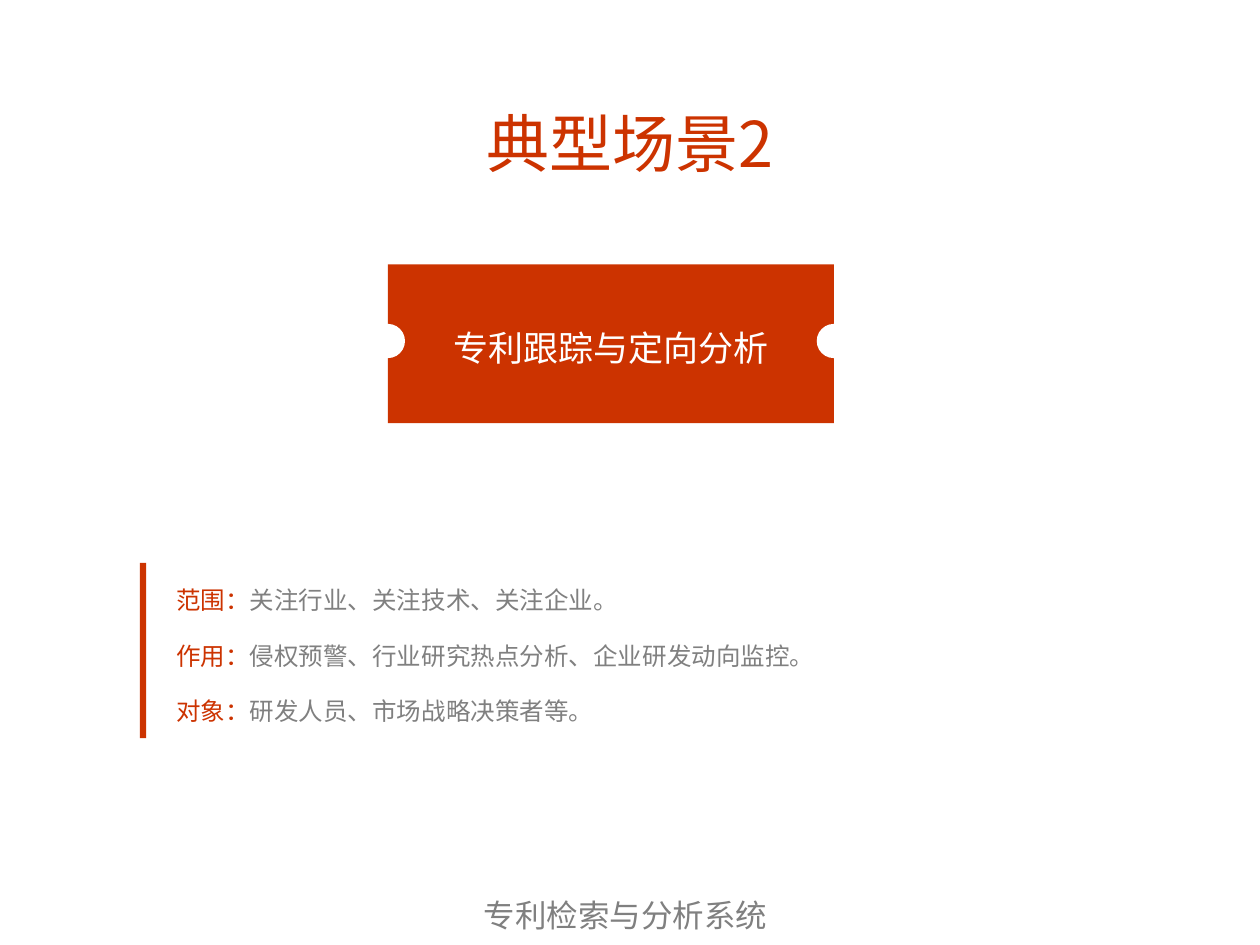
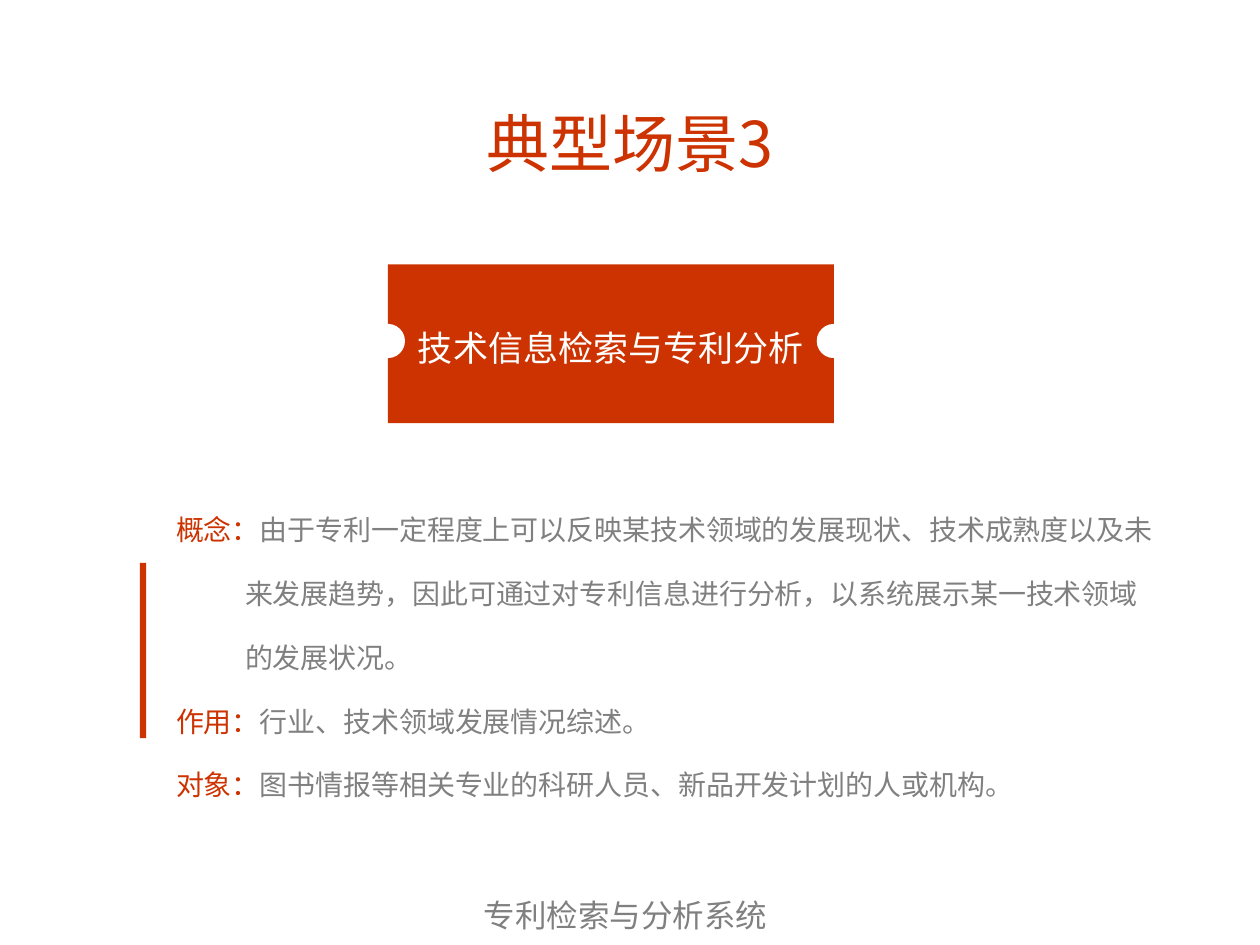
from dataclasses import dataclass
from typing import NamedTuple

from lxml.etree import SubElement
from pptx import Presentation
from pptx.dml.color import RGBColor as Rgb
from pptx.enum.shapes import MSO_SHAPE as Preset
from pptx.enum.text import MSO_ANCHOR as Anchor, PP_ALIGN as Align
from pptx.oxml.ns import qn
from pptx.util import Cm, Pt


@dataclass(frozen=True)
class Theme:
    """Colours, fonts and type sizes shared by the slides."""
    accent: Rgb = Rgb(0xCC, 0x33, 0x00)
    grey: Rgb = Rgb(0x80, 0x80, 0x80)
    white: Rgb = Rgb(0xFF, 0xFF, 0xFF)
    title_font: str = "Noto Sans CJK SC"
    body_font: str = "Arial"
    title_size: int = 36
    topic_size: int = 20
    footer_size: int = 18


class Box(NamedTuple):
    """A region of the slide in centimetres."""
    left: float
    top: float
    width: float
    height: float

    def lengths(self):
        """Return the four sides as slide lengths."""
        return [Cm(side) for side in self]


THEME = Theme()
TITLE = Box(1.75, 1.02, 21.89, 3.68)
TICKET = Box(7.82, 5.33, 8.99, 3.2)
SIDE_BAR = Box(2.82, 11.35, 0.13, 3.53)
DETAILS = Box(3.3, 8.74, 20.6, 8.41)
FOOTER = Box(9.5, 17.93, 6.71, 1.02)
NOTCH_SIZE, NOTCH_DROP = 0.69, 1.2
CONTINUATION_INDENT = 1.39
FOOTER_TEXT = "专利检索与分析系统"

SCENARIOS = [
    ("典型场景2", "专利跟踪与定向分析", 14, [
        ("范围：", "关注行业、关注技术、关注企业。"),
        ("作用：", "侵权预警、行业研究热点分析、企业研发动向监控。"),
        ("对象：", "研发人员、市场战略决策者等。"),
    ]),
    ("典型场景3", "技术信息检索与专利分析", 16, [
        ("概念：", "由于专利一定程度上可以反映某技术领域的发展现状、技术成熟度以及未"),
        ("", "来发展趋势，因此可通过对专利信息进行分析，以系统展示某一技术领域"),
        ("", "的发展状况。"),
        ("作用：", "行业、技术领域发展情况综述。"),
        ("对象：", "图书情报等相关专业的科研人员、新品开发计划的人或机构。"),
    ]),
]


def add_run(paragraph, text, size, color, font=THEME.body_font):
    """Append one styled run, with the font set for Latin and Chinese."""
    run = paragraph.add_run()
    run.text = text
    run.font.size = Pt(size)
    run.font.color.rgb = color
    run.font.name = font
    SubElement(run.font._element, qn("a:ea"), typeface=font)


def add_filled(slide, preset, box, color):
    """Add a flat shape without outline or shadow."""
    shape = slide.shapes.add_shape(preset, *box.lengths())
    shape.shadow.inherit = False
    shape.fill.solid()
    shape.fill.fore_color.rgb = color
    shape.line.fill.background()
    return shape


def add_text_frame(slide, box, anchor=Anchor.MIDDLE):
    """Add a wrapping text box and return its frame."""
    frame = slide.shapes.add_textbox(*box.lengths()).text_frame
    frame.word_wrap = True
    frame.vertical_anchor = anchor
    return frame


def add_title(slide, box, title):
    """Place the centred scenario title."""
    heading = add_text_frame(slide, box).paragraphs[0]
    heading.alignment = Align.CENTER
    add_run(heading, title, THEME.title_size, THEME.accent, THEME.title_font)


def add_ticket(slide, box, topic):
    """Draw the topic ticket with a round notch on each side edge."""
    ticket = add_filled(slide, Preset.RECTANGLE, box, THEME.accent)
    ticket.text_frame.word_wrap = True
    ticket.text_frame.vertical_anchor = Anchor.MIDDLE
    label = ticket.text_frame.paragraphs[0]
    label.alignment = Align.CENTER
    label.line_spacing = 1.2
    add_run(label, topic, THEME.topic_size, THEME.white)
    for edge in (box.left, box.left + box.width):
        notch = Box(edge - NOTCH_SIZE / 2, box.top + NOTCH_DROP, NOTCH_SIZE, NOTCH_SIZE)
        add_filled(slide, Preset.OVAL, notch, THEME.white)


def add_details(slide, box, size, details):
    """List the labelled details, indenting the lines without a label."""
    frame = add_text_frame(slide, box)
    for index, (label, detail) in enumerate(details):
        line = frame.add_paragraph() if index else frame.paragraphs[0]
        line.line_spacing = 1.9
        if label:
            add_run(line, label, size, THEME.accent)
        else:
            line._p.get_or_add_pPr().set("marL", str(Cm(CONTINUATION_INDENT)))
        add_run(line, detail, size, THEME.grey)


def add_footer(slide, box):
    """Place the system name at the foot of the slide."""
    system_name = add_text_frame(slide, box, Anchor.TOP).paragraphs[0]
    add_run(system_name, FOOTER_TEXT, THEME.footer_size, THEME.grey)


def add_scenario(deck, title, topic, size, details):
    """Build one scenario slide."""
    slide = deck.slides.add_slide(deck.slide_layouts[6])
    add_title(slide, TITLE, title)
    add_ticket(slide, TICKET, topic)
    add_filled(slide, Preset.RECTANGLE, SIDE_BAR, THEME.accent)
    add_details(slide, DETAILS, size, details)
    add_footer(slide, FOOTER)


def main():
    """Build and save the deck."""
    deck = Presentation()
    deck.slide_width, deck.slide_height = Cm(25.4), Cm(19.05)
    for scenario in SCENARIOS:
        add_scenario(deck, *scenario)
    deck.save("out.pptx")


if __name__ == "__main__":
    main()
